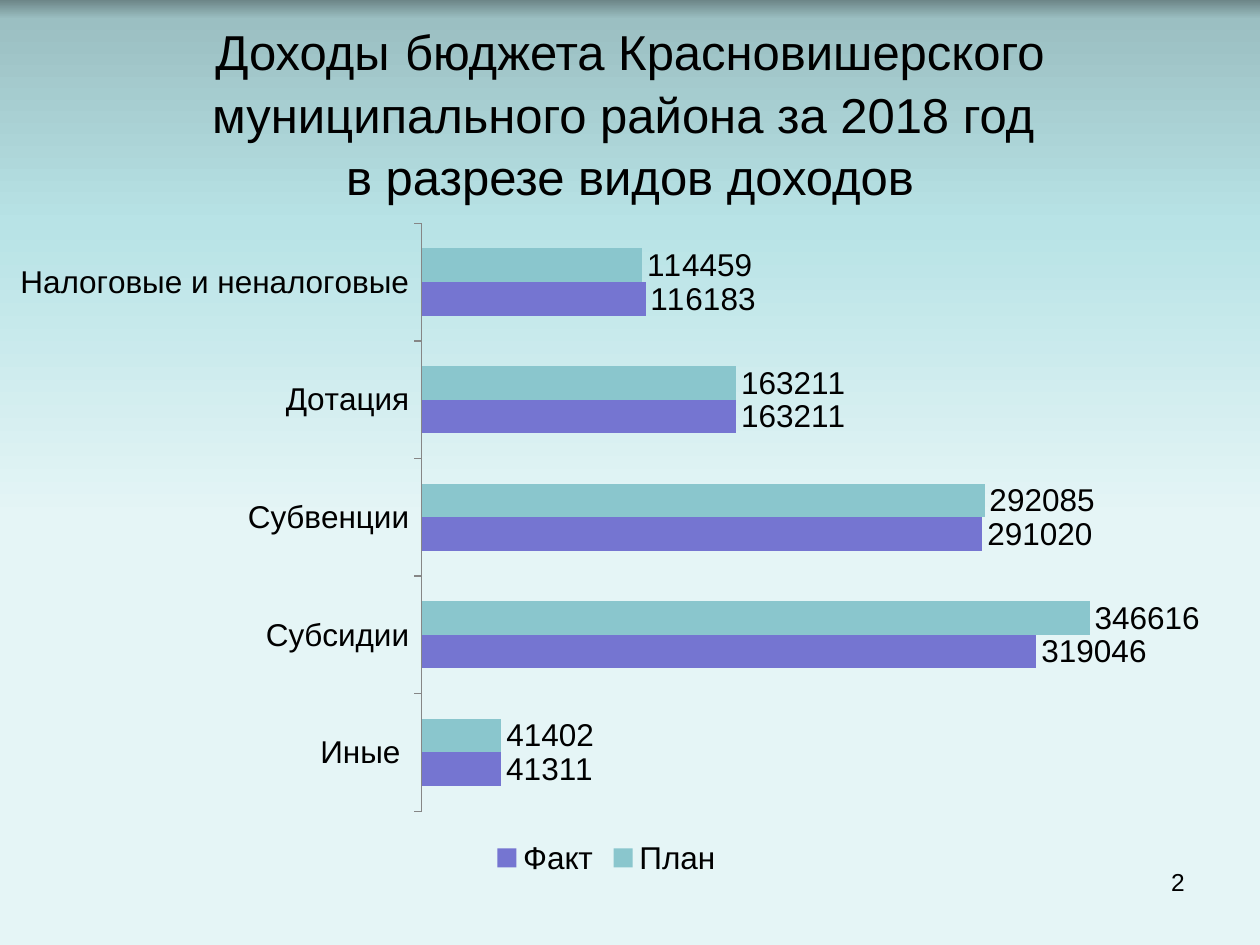
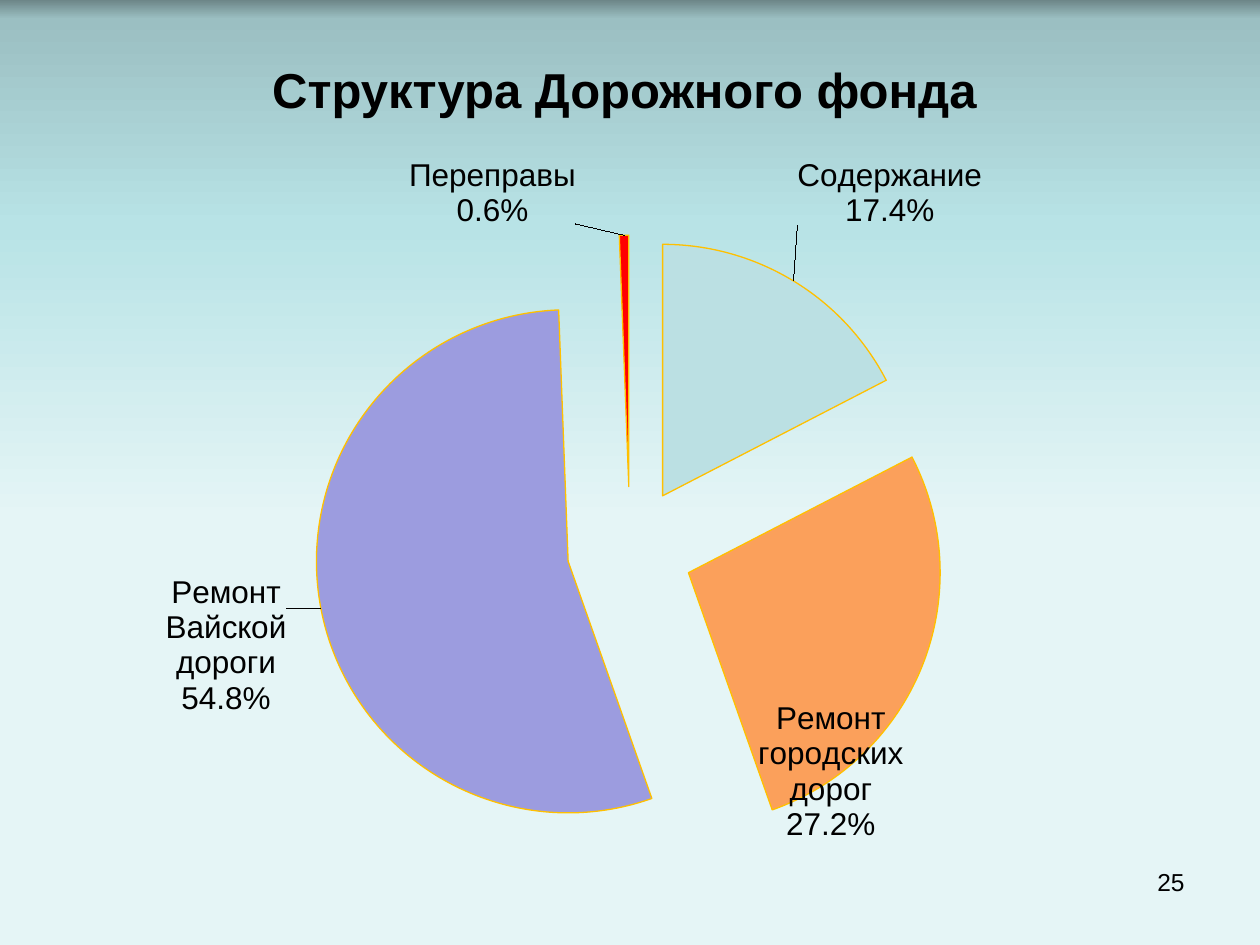
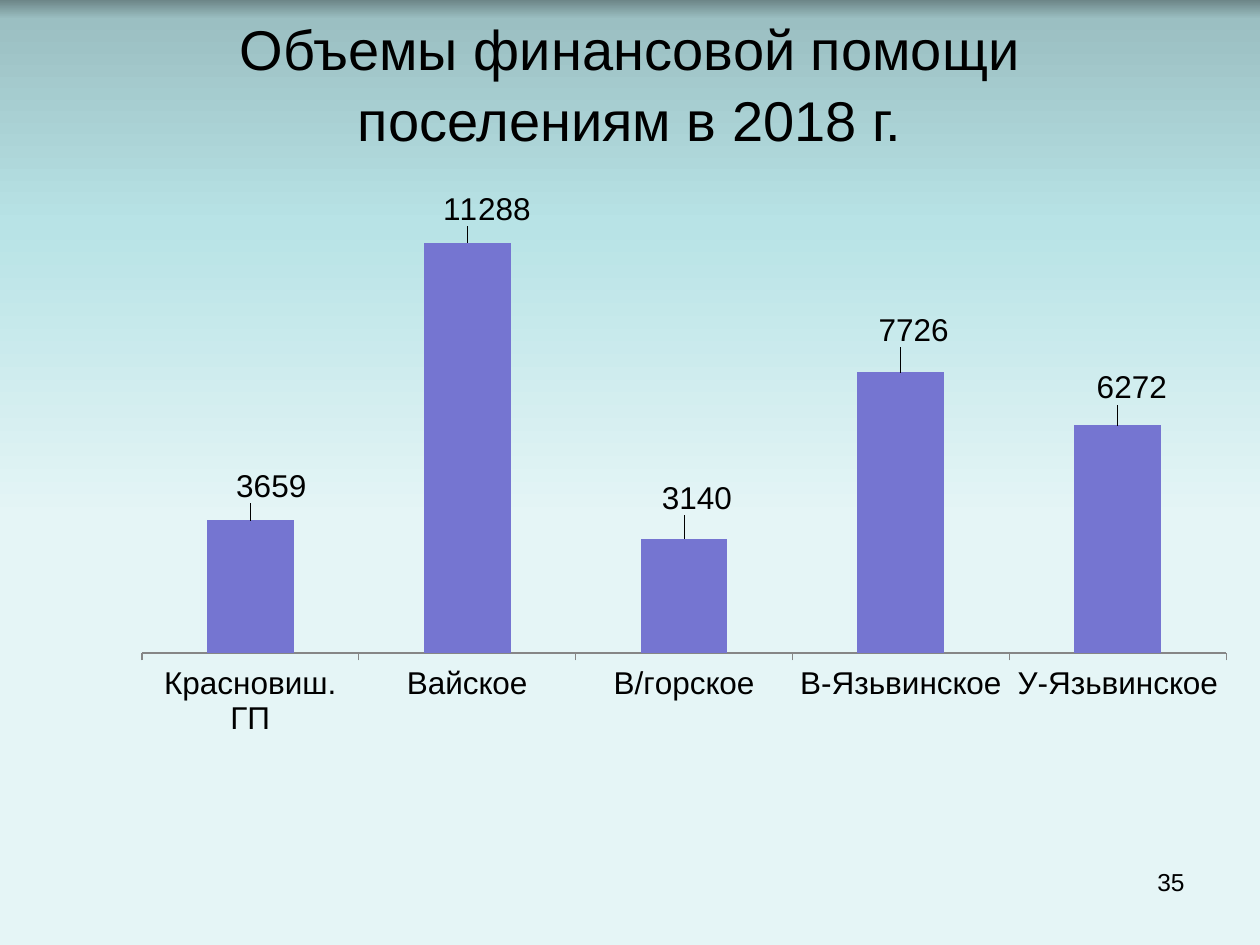
from copy import deepcopy

from pptx import Presentation
from pptx.chart.data import CategoryChartData
from pptx.dml.color import RGBColor
from pptx.enum.chart import XL_CHART_TYPE, XL_LABEL_POSITION, XL_LEGEND_POSITION, XL_TICK_LABEL_POSITION, XL_TICK_MARK
from pptx.enum.text import MSO_ANCHOR, PP_ALIGN
from pptx.oxml import parse_xml
from pptx.oxml.ns import nsdecls, qn
from pptx.util import Pt

BAR, COLUMN, PIE = XL_CHART_TYPE.BAR_CLUSTERED, XL_CHART_TYPE.COLUMN_CLUSTERED, XL_CHART_TYPE.PIE
OUTSIDE_END = XL_LABEL_POSITION.OUTSIDE_END
LOW = XL_TICK_LABEL_POSITION.LOW
TICK_OUT, TICK_NONE = XL_TICK_MARK.OUTSIDE, XL_TICK_MARK.NONE
BOTTOM = XL_LEGEND_POSITION.BOTTOM
CENTER, RIGHT = PP_ALIGN.CENTER, PP_ALIGN.RIGHT
MIDDLE, TOP = MSO_ANCHOR.MIDDLE, MSO_ANCHOR.TOP

PX = 914400 / 126
FONT = "Arial"
BLACK, GREY, TEAL, VIOLET, GOLD = "000000", "868686", "8AC6CD", "7575D1", "FFC000"
BACKGROUND = [(0, "6D8688"), (2, "9BBFC2"), (24, "B8E3E6"), (55, "E5F5F6"), (100, "E5F5F6")]
NUMBER_BOX = (903, 861, 294, 66)

# Label shifts are px from the usual place outside the bar or slice.
SLIDES = [
    {
        "title": [("Доходы", 28), (" ", 32),
                  ("бюджета Красновишерского муниципального района за 2018 год \vв разрезе видов доходов", 28)],
        "title_box": (63, 21, 1134, 174),
        "number": "2",
        "chart": {
            "type": BAR, "box": (-4, 210, 1221, 672), "legend": True, "reverse": True,
            "cats": ["Налоговые и неналоговые", "Дотация", "Субвенции", "Субсидии", "Иные "],
            "series": [("План", (114459, 163211, 292085, 346616, 41402), TEAL),
                       ("Факт", (116183, 163211, 291020, 319046, 41311), VIOLET)],
        },
    },
    {
        "title": [("Структура Дорожного фонда", 28)],
        "title_box": (21, 38, 1207, 98),
        "bold": True,
        "number": "25",
        "chart": {
            "type": PIE, "box": (63, 157, 1134, 777), "plot": (0.08, 0.1, 0.84, 0.81),
            "cats": ["Содержание", "Ремонт городских дорог", "Ремонт Вайской дороги", "Переправы"],
            "series": [("Series 1", (17.4, 27.2, 54.8, 0.6), None)],
            "slices": ["BBE0E3", "FBA05B", "9C9CDF", "FF0000"], "explosion": 25,
            "shifts": [(0, -50), (-171, 33), (-27, -36), (-131, -4)],
        },
    },
    {
        "title": [("Объемы финансовой помощи поселениям в 2018 г.", 32)],
        "title_box": (63, 38, 1134, 88),
        "number": "35",
        "chart": {
            "type": COLUMN, "box": (72, 175, 1166, 703), "plot": (0.06, 0.06, 0.93, 0.62),
            "cats": ["Красновиш. ГП", "Вайское", "В/горское", "В-Язьвинское", "У-Язьвинское"],
            "series": [("Series 1", (3659, 11288, 3140, 7726, 6272), VIOLET)],
            "shifts": [(21, -11), (20, -11), (13, -18), (13, -20), (14, -15)],
        },
    },
]


def emu(box):
    return [round(v * PX) for v in box]


def rgb(value):
    return RGBColor.from_string(value)


def set_attrs(obj, **values):
    for name, value in values.items():
        setattr(obj, name, value)


def style_font(font, size, bold=False):
    set_attrs(font, name=FONT, size=Pt(size), bold=bold)
    font.color.rgb = rgb(BLACK)


def paint_background(master):
    fill = master.background.fill
    fill.gradient()
    fill.gradient_angle = 270
    stops = master.element.find(".//" + qn("a:gsLst"))
    for stop in list(stops):
        stops.remove(stop)
    for pos, color in BACKGROUND:
        stops.append(parse_xml(
            f'<a:gs {nsdecls("a")} pos="{pos * 1000}"><a:srgbClr val="{color}"/></a:gs>'))


def add_text(s, box, runs, align, anchor, bold=False, spacing=1.0):
    tf = s.shapes.add_textbox(*emu(box)).text_frame
    set_attrs(tf, word_wrap=True, vertical_anchor=anchor)
    p = tf.paragraphs[0]
    set_attrs(p, alignment=align, line_spacing=spacing)
    for text, size in runs:
        for i, line in enumerate(text.split("\v")):
            if i:
                p.add_line_break()
            r = p.add_run()
            r.text = line
            style_font(r.font, size, bold)


def manual_layout(**values):
    items = "".join(f'<c:{name} val="{value}"/>' for name, value in values.items())
    return parse_xml(f'<c:layout {nsdecls("c")}><c:manualLayout>{items}</c:manualLayout></c:layout>')


def place_plot(chart, plot):
    area = chart._chartSpace.find(".//" + qn("c:plotArea"))
    for old in area.findall(qn("c:layout")):
        area.remove(old)
    x, y, w, h = plot
    area.insert(0, manual_layout(layoutTarget="inner", xMode="edge", yMode="edge", x=x, y=y, w=w, h=h))


def shift_labels(series, shifts, box):
    """Give each point its own label, moved by a share of the chart size."""
    labels = series._element.find(qn("c:dLbls"))
    shared = [e for e in labels if e.tag != qn("c:showLeaderLines")]
    for i, (dx, dy) in enumerate(shifts):
        label = parse_xml(f'<c:dLbl {nsdecls("c")}><c:idx val="{i}"/></c:dLbl>')
        label.append(manual_layout(x=round(dx / box[2], 3), y=round(dy / box[3], 3)))
        label.extend(deepcopy(shared))
        labels.insert(i, label)


def style_axes(chart, reverse):
    axis = chart.category_axis
    set_attrs(axis, major_tick_mark=TICK_OUT, minor_tick_mark=TICK_NONE,
              tick_label_position=LOW, reverse_order=reverse, has_major_gridlines=False)
    axis.format.line.color.rgb = rgb(GREY)
    axis.format.line.width = Pt(0.75)
    set_attrs(chart.value_axis, visible=False, has_major_gridlines=False, minimum_scale=0)


def style_slices(series, colors, explosion):
    for i, color in enumerate(colors):
        fmt = series.points[i].format
        fmt.fill.solid()
        fmt.fill.fore_color.rgb = rgb(color)
        fmt.line.color.rgb = rgb(GOLD)
        fmt.line.width = Pt(0.75)
    series._element.get_or_add_spPr().addnext(
        parse_xml(f'<c:explosion {nsdecls("c")} val="{explosion}"/>'))


def add_chart(s, spec_):
    data = CategoryChartData()
    data.categories = spec_["cats"]
    for name, values, _ in spec_["series"]:
        data.add_series(name, values)
    chart = s.shapes.add_chart(spec_["type"], *emu(spec_["box"]), data).chart
    set_attrs(chart, has_title=False, has_legend=spec_.get("legend", False))
    style_font(chart.font, 18)
    if chart.has_legend:
        set_attrs(chart.legend, position=BOTTOM, include_in_layout=False)
    if "plot" in spec_:
        place_plot(chart, spec_["plot"])

    is_pie = spec_["type"] == PIE
    plot = chart.plots[0]
    plot.vary_by_categories = is_pie
    if not is_pie:
        set_attrs(plot, gap_width=150, overlap=0)
        style_axes(chart, spec_.get("reverse", False))

    for series, (_, _, color) in zip(plot.series, spec_["series"]):
        if is_pie:
            style_slices(series, spec_["slices"], spec_["explosion"])
        else:
            series.invert_if_negative = False
            series.format.fill.solid()
            series.format.fill.fore_color.rgb = rgb(color)
        labels = series.data_labels
        style_font(labels.font, 18)
        set_attrs(labels, show_value=not is_pie, show_percentage=is_pie, show_category_name=is_pie,
                  number_format="0.0%" if is_pie else "General",
                  number_format_is_linked=False, position=OUTSIDE_END)
        shift_labels(series, spec_.get("shifts", []), spec_["box"])


def main():
    prs = Presentation()
    prs.slide_width, prs.slide_height = emu((1260, 945))
    paint_background(prs.slide_master)
    for content in SLIDES:
        s = prs.slides.add_slide(prs.slide_layouts[6])
        add_text(s, content["title_box"], content["title"], CENTER, MIDDLE,
                 content.get("bold", False), 1.05)
        add_chart(s, content["chart"])
        add_text(s, NUMBER_BOX, [(content["number"], 14)], RIGHT, TOP)
    prs.save("out.pptx")


if __name__ == "__main__":
    main()
